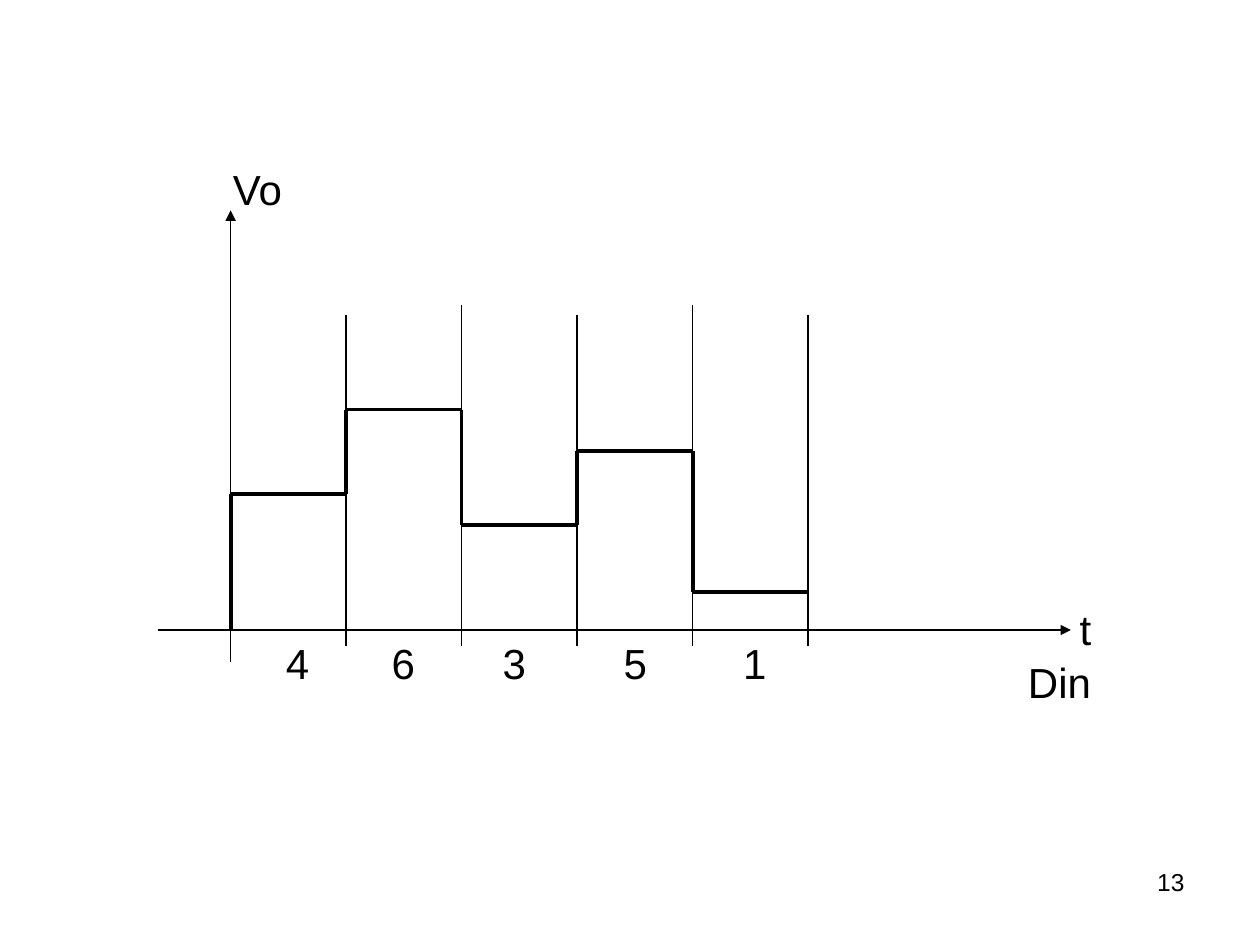
from lxml.etree import SubElement
from pptx import Presentation
from pptx.dml.color import RGBColor
from pptx.enum.shapes import MSO_CONNECTOR
from pptx.enum.text import MSO_ANCHOR, MSO_AUTO_SIZE, PP_ALIGN
from pptx.oxml.ns import qn
from pptx.util import Inches, Pt

BLACK = RGBColor(0, 0, 0)
WHITE = RGBColor(255, 255, 255)
FONT = "Arial"
THIN, THICK = 0.75, 2.25

# Time axis, and the equal sampling periods along it
ORIGIN_X, AXIS_Y = 1.83, 5
PERIOD = 11 / 12

# Input code, left edge of its label, output level
SAMPLES = [
    ("4", 2.17, 3.92),
    ("6", 3.01, 3.25),
    ("3", 3.89, 4.17),
    ("5", 4.85, 3.58),
    ("1", 5.8, 4.7),
]


def write(tf, text, size=24, align=PP_ALIGN.LEFT, wrap=False):
    tf.word_wrap = wrap
    tf.auto_size = MSO_AUTO_SIZE.NONE if wrap else MSO_AUTO_SIZE.SHAPE_TO_FIT_TEXT
    tf.vertical_anchor = MSO_ANCHOR.TOP
    p = tf.paragraphs[0]
    p.alignment = align
    r = p.add_run()
    r.text = text
    r.font.name = FONT
    r.font.size = Pt(size)
    r.font.color.rgb = BLACK


class Diagram:
    def __init__(self, slide, color=BLACK):
        self.s = slide
        self.color = color

    def text(self, text, x, y, w, h=0.5, **style):
        sp = self.s.shapes.add_textbox(Inches(x), Inches(y), Inches(w), Inches(h))
        write(sp.text_frame, text, **style)

    def line(self, x1, y1, x2, y2, width=THIN, arrow=False):
        sp = self.s.shapes.add_connector(
            MSO_CONNECTOR.STRAIGHT, Inches(x1), Inches(y1), Inches(x2), Inches(y2))
        sp.line.color.rgb = self.color
        sp.line.width = Pt(width)
        if arrow:
            SubElement(sp.line._get_or_add_ln(), qn("a:tailEnd"), type="triangle")
        SubElement(sp._element.spPr, qn("a:effectLst"))


def main():
    prs = Presentation()
    prs.slide_width, prs.slide_height = Inches(10), Inches(7.5)
    s = prs.slides.add_slide(prs.slide_layouts[6])
    s.background.fill.solid()
    s.background.fill.fore_color.rgb = WHITE
    d = Diagram(s)

    # Slide number
    d.text("13", 7.17, 6.83, 2.33, 0.52, size=14, align=PP_ALIGN.RIGHT, wrap=True)

    # Axes and their names
    d.line(1.25, AXIS_Y, 8.5, AXIS_Y, arrow=True)
    d.line(ORIGIN_X, 5.25, ORIGIN_X, 1.67, arrow=True)
    d.text("t", 8.47, 4.74, 0.29)
    d.text("Vo", 1.75, 1.25, 0.6)
    d.text("Din", 8.06, 5.16, 0.71)

    # Each period: end marker, code, rise or fall, held level
    previous = AXIS_Y
    for i, (code, label_x, level) in enumerate(SAMPLES):
        start = ORIGIN_X + i * PERIOD
        end = start + PERIOD
        d.line(end, 2.42 if i % 2 else 2.5, end, 5.13)
        d.text(code, label_x, 5.01, 0.39)
        d.line(start, previous, start, level, THICK)
        d.line(start, level, end, level, THICK)
        previous = level

    prs.save("out.pptx")


if __name__ == "__main__":
    main()
